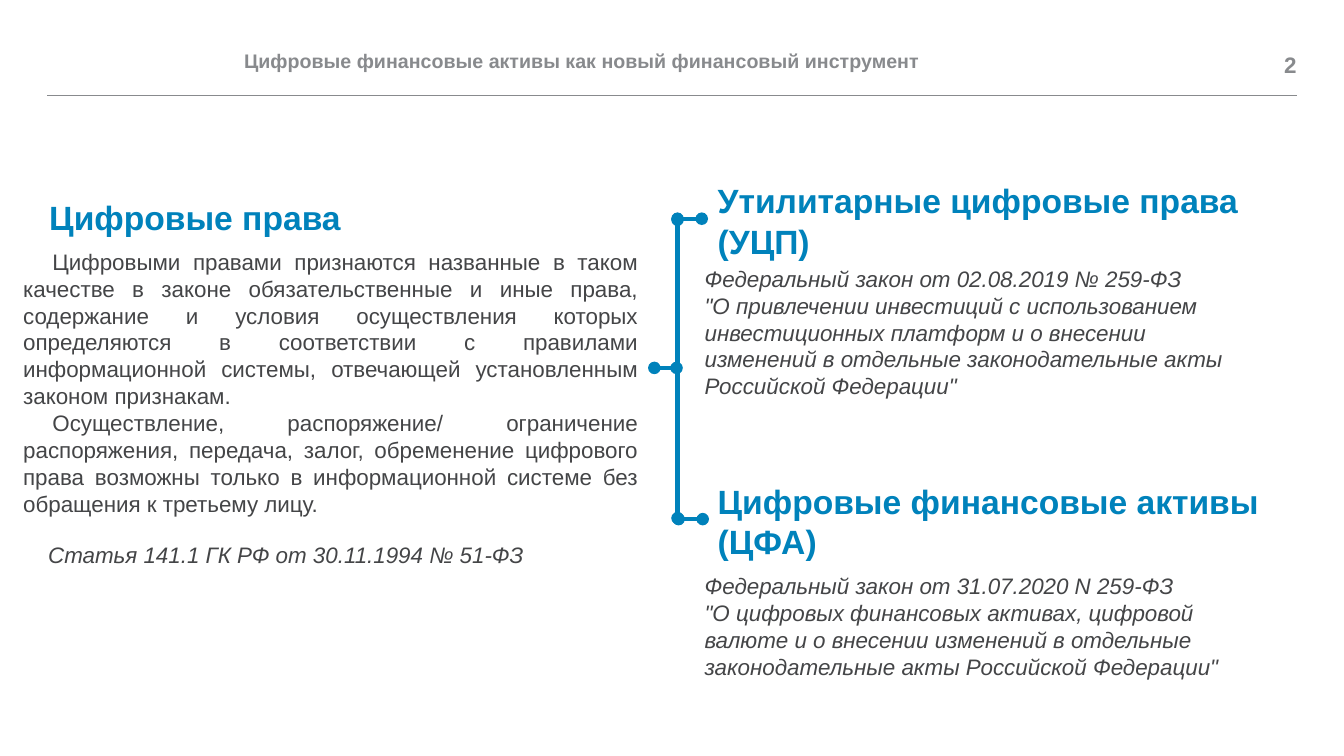
from lxml import etree
from pptx import Presentation
from pptx import util as u
from pptx.dml.color import RGBColor
from pptx.enum import shapes, text
from pptx.oxml.ns import qn

PX = 9144  # 100 px to the inch
FONT = "Arial"
BLUE = RGBColor(0x00, 0x82, 0xBB)
GRAY = RGBColor(0x88, 0x8A, 0x8D)
DARK = RGBColor(0x44, 0x45, 0x47)
LEFT, RIGHT, JUSTIFY = (text.PP_ALIGN.LEFT, text.PP_ALIGN.RIGHT,
                        text.PP_ALIGN.JUSTIFY)

TITLE = "Цифровые финансовые активы как новый финансовый инструмент"
DEFINITION = [
    "Цифровыми правами признаются названные в таком качестве в законе "
    "обязательственные и иные права, содержание и условия осуществления "
    "которых определяются в соответствии с правилами информационной системы, "
    "отвечающей установленным законом признакам.",
    "Осуществление, распоряжение/ ограничение распоряжения, передача, залог, "
    "обременение цифрового права возможны только в информационной системе "
    "без обращения к третьему лицу.",
]
ARTICLE = "Статья 141.1 ГК РФ от 30.11.1994 № 51-ФЗ"
UTILITY_LAW = (
    "Федеральный закон от 02.08.2019 № 259-ФЗ\n"
    "\"О привлечении инвестиций с использованием инвестиционных платформ "
    "и о внесении изменений в отдельные законодательные акты "
    "Российской Федерации\"")
ASSETS_LAW = (
    "Федеральный закон от 31.07.2020 N 259-ФЗ\n"
    "\"О цифровых финансовых активах, цифровой валюте и о внесении изменений "
    "в отдельные законодательные акты Российской Федерации\"")


def place(shape, box):
    shape.left, shape.top, shape.width, shape.height = (n * PX for n in box)


def write(shape, paragraphs, size, color, bold=False, italic=False,
          align=LEFT, indent=0):
    frame = shape.text_frame
    frame.word_wrap = True
    for index, words in enumerate(paragraphs):
        paragraph = frame.add_paragraph() if index else frame.paragraphs[0]
        paragraph.text = words
        paragraph.alignment = align
        paragraph.space_before = u.Pt(0)
        properties = paragraph._p.get_or_add_pPr()
        properties.set("marL", "0")
        properties.set("indent", str(indent * PX))
        etree.SubElement(properties, qn("a:buNone"))
        font = paragraph.font
        font.name, font.size, font.color.rgb = FONT, u.Pt(size), color
        font.bold, font.italic = bold, italic


def format_header(shape, words, size, align=LEFT):
    frame = shape.text_frame
    frame.margin_left = frame.margin_right = 0
    frame.margin_top = frame.margin_bottom = 0
    frame.vertical_anchor = text.MSO_ANCHOR.MIDDLE
    frame.auto_size = text.MSO_AUTO_SIZE.NONE
    write(shape, [words], size, GRAY, bold=True, align=align)


def add_text_box(slide, box):
    shape = slide.shapes.add_textbox(*(n * PX for n in box))
    shape.text_frame.auto_size = text.MSO_AUTO_SIZE.SHAPE_TO_FIT_TEXT
    return shape


def add_heading(slide, box, words):
    write(add_text_box(slide, box), [words], 24, BLUE, bold=True)


def add_reference(slide, box, words, **layout):
    write(add_text_box(slide, box), [words], 16, DARK, italic=True, **layout)


def add_line(slide, ends, color, width, dots=False):
    line = slide.shapes.add_connector(
        shapes.MSO_CONNECTOR.STRAIGHT, *(n * PX for n in ends))
    line.line.color.rgb = color
    line.line.width = u.Pt(width)
    if dots:
        outline = line.line._get_or_add_ln()
        for end in ("a:headEnd", "a:tailEnd"):
            etree.SubElement(outline, qn(end), type="oval")
    etree.SubElement(line._element.spPr, qn("a:effectLst"))


def main():
    presentation = Presentation()
    presentation.slide_width = 1333 * PX
    presentation.slide_height = 750 * PX
    slide = presentation.slides.add_slide(presentation.slide_layouts[1])

    # Header: title, page number and rule
    title = slide.shapes.title
    place(title, (242, 43, 923, 35))
    format_header(title, TITLE, 14)
    number = slide.shapes.add_textbox(*(n * PX for n in (1205, 47, 81, 35)))
    format_header(number, "2", 16, RIGHT)
    add_line(slide, (47, 95, 1286, 95), GRAY, 0.5)

    # Bracket from the definition to the two kinds of rights
    for ends in ((696, 217, 672, 217), (697, 515, 673, 515),
                 (672, 218, 672, 514), (671, 365, 649, 365)):
        add_line(slide, ends, BLUE, 3, dots=True)

    # Left column: definition
    add_heading(slide, (39, 190, 314, 50), "Цифровые права")
    definition = slide.placeholders[1]
    place(definition, (13, 241, 630, 279))
    definition.text_frame.auto_size = text.MSO_AUTO_SIZE.NONE
    write(definition, DEFINITION, 16, DARK, align=JUSTIFY, indent=29)
    add_reference(slide, (9, 532, 630, 37), ARTICLE, align=JUSTIFY, indent=29)

    # Right column: two kinds of rights and their laws
    add_heading(slide, (702, 174, 682, 91), "Утилитарные цифровые права\n(УЦП)")
    add_reference(slide, (689, 258, 554, 145), UTILITY_LAW)
    add_heading(slide, (702, 472, 596, 91), "Цифровые финансовые активы (ЦФА)")
    add_reference(slide, (689, 563, 537, 118), ASSETS_LAW)

    presentation.save("out.pptx")


if __name__ == "__main__":
    main()
